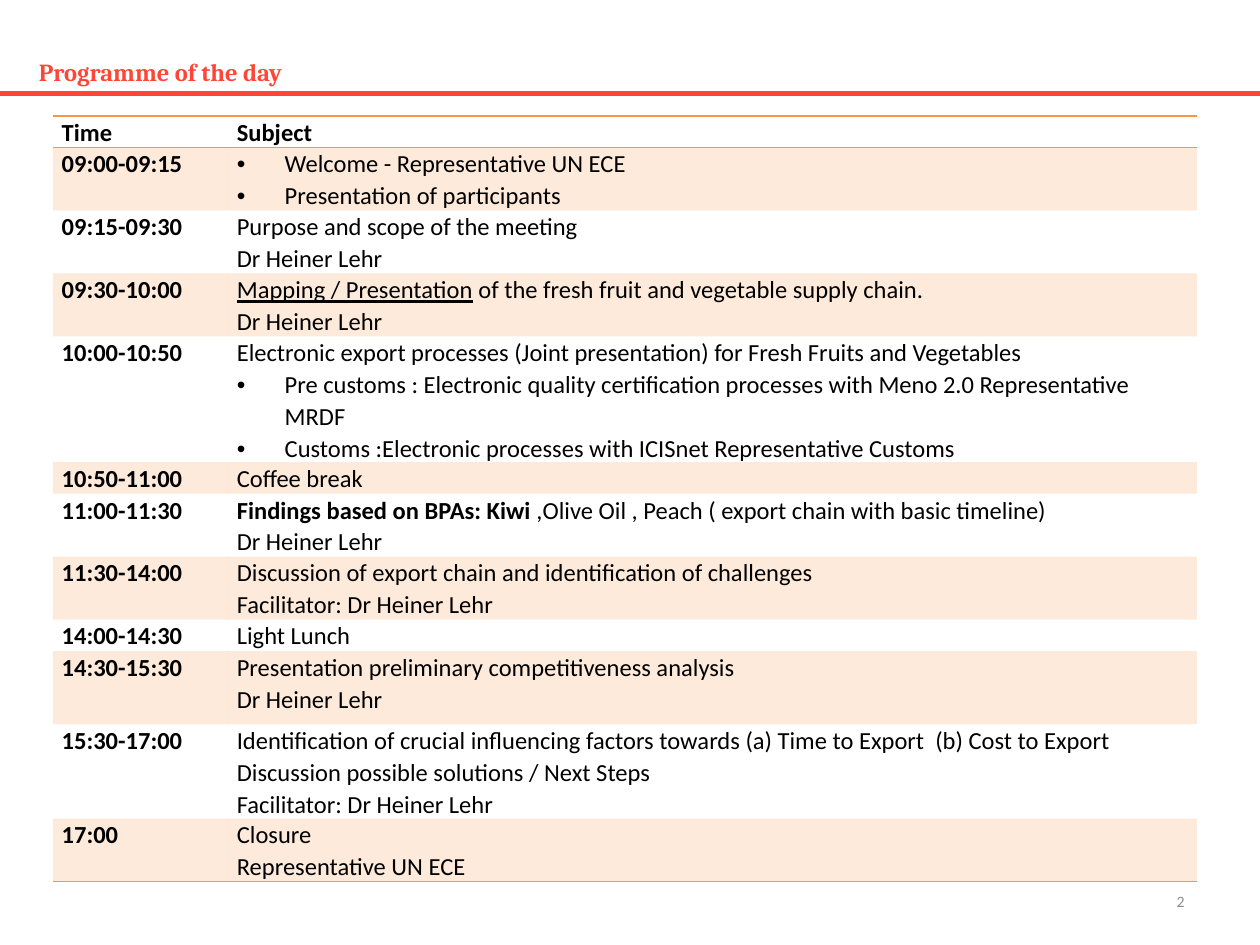
"""Build the programme-of-the-day slide with its timetable."""
from lxml import etree
from pptx import Presentation, util as u
from pptx.dml.color import RGBColor
from pptx.enum import shapes, text
from pptx.oxml import parse_xml
from pptx.oxml.ns import nsdecls, qn

RED, ORANGE, BLACK, GREY = "FF4535", "F79646", "000000", "8C8C8C"
NO_GRID = "{2D5ABB26-0587-4C30-8999-92F81FD0307C}"


def rgb(value):
    return RGBColor.from_string(value)


def add_text(p, words, size, face, color, bold=False, underline=False):
    for i, line in enumerate(words.split("\n")):
        if i:
            p.add_line_break()
        r = p.add_run()
        r.text = line
        f = r.font
        f.size, f.name, f.bold, f.underline = u.Pt(size), face, bold, underline
        f.color.rgb = rgb(color)


prs = Presentation()
prs.slide_width, prs.slide_height = u.Inches(10), u.Inches(7.5)
s = prs.slides.add_slide(prs.slide_layouts[6])
unit = prs.slide_width // 100

ln = s.shapes.add_connector(shapes.MSO_CONNECTOR.STRAIGHT, 0, int(7.4 * unit), prs.slide_width, int(7.4 * unit))
ln.line.color.rgb = rgb(RED)
ln.line.width = u.Pt(2.7)
etree.SubElement(ln._element.spPr, qn("a:effectLst"))

labels = [
    ((2.1, 3.9, 90, 3.5), "Programme of the day", 14, "Cambria", RED, True, text.PP_ALIGN.LEFT),
    ((71.7, 69.5, 23.3, 4), "2", 9, "Calibri", GREY, False, text.PP_ALIGN.RIGHT),
]
for at, words, size, face, color, bold, align in labels:
    tf = s.shapes.add_textbox(*[int(v * unit) for v in at]).text_frame
    tf.word_wrap = True
    tf.vertical_anchor = text.MSO_ANCHOR.MIDDLE
    p = tf.paragraphs[0]
    p.alignment = align
    add_text(p, words, size, face, color, bold)

speaker = "Dr Heiner Lehr"
facilitator = "Facilitator: " + speaker
rows = [
    (2.1, "Time", ["*Subject"]),
    (4.2, "09:00-09:15", ["•Welcome - Representative UN ECE", "•Presentation of participants"]),
    (4.2, "09:15-09:30", ["Purpose and scope of the meeting", speaker]),
    (4.2, "09:30-10:00", ["_Mapping / Presentation| of the fresh fruit and vegetable supply chain. \n" + speaker]),
    (8.4, "10:00-10:50", [
        "Electronic export processes (Joint presentation) for Fresh Fruits and Vegetables",
        "•Pre customs : Electronic quality certification processes with Meno 2.0 Representative MRDF",
        "•Customs :Electronic processes with ICISnet Representative Customs"]),
    (2.1, "10:50-11:00", ["Coffee break"]),
    (4.2, "11:00-11:30", [
        "*Findings based on BPAs: Kiwi |,Olive Oil , Peach ( export chain with basic timeline)", speaker]),
    (4.2, "11:30-14:00", ["Discussion of export chain and identification of challenges", facilitator]),
    (2.1, "14:00-14:30", ["Light Lunch"]),
    (5.8, "14:30-15:30", ["Presentation preliminary competitiveness analysis", speaker]),
    (6.4, "15:30-17:00", [
        "Identification of crucial influencing factors towards (a) Time to Export  (b) Cost to Export",
        "Discussion possible solutions / Next Steps\n" + facilitator]),
    (4.2, "17:00", ["Closure\nRepresentative UN ECE"]),
]
cols = [13.9, 76.9]
height = sum(row[0] for row in rows)
at = [int(v * unit) for v in (4.2, 9.2, sum(cols), height)]
tb = s.shapes.add_table(len(rows), len(cols), *at).table
tb.first_row = tb.horz_banding = False
tb._tbl.tblPr.find(qn("a:tableStyleId")).text = NO_GRID
for col, width in zip(tb.columns, cols):
    col.width = int(width * unit)

edges = {0: ["lnB", "lnT"], len(rows) - 1: ["lnB"]}
for i, (row_height, time, subject) in enumerate(rows):
    tb.rows[i].height = int(row_height * unit)
    for j, paragraphs in enumerate([["*" + time], subject]):
        cell = tb.cell(i, j)
        cell.margin_left = cell.margin_right = u.Inches(0.07)
        cell.margin_top = cell.margin_bottom = 0
        tcPr = cell._tc.get_or_add_tcPr()
        if i % 2:
            cell.fill.solid()
            cell.fill.fore_color.rgb = rgb(ORANGE)
            etree.SubElement(tcPr.find(".//" + qn("a:srgbClr")), qn("a:alpha"), val="20000")
        else:
            cell.fill.background()
        for edge in edges.get(i, []):
            tcPr.insert(0, parse_xml(
                f'<a:{edge} {nsdecls("a")} w="12700"><a:solidFill>'
                f'<a:srgbClr val="{ORANGE}"/></a:solidFill></a:{edge}>'))
        tf = cell.text_frame
        for k, words in enumerate(paragraphs):
            p = tf.add_paragraph() if k else tf.paragraphs[0]
            if words.startswith("•"):
                pPr = p._p.get_or_add_pPr()
                pPr.set("marL", str(u.Inches(0.38)))
                pPr.set("indent", str(-u.Inches(0.38)))
                etree.SubElement(pPr, qn("a:buFont"), typeface="Arial")
                etree.SubElement(pPr, qn("a:buChar"), char="•")
            p.line_spacing = 1.07
            for part in words.lstrip("•").split("|"):
                add_text(p, part.lstrip("*_"), 14, "Calibri", BLACK, part.startswith("*"), part.startswith("_"))

prs.save("out.pptx")
